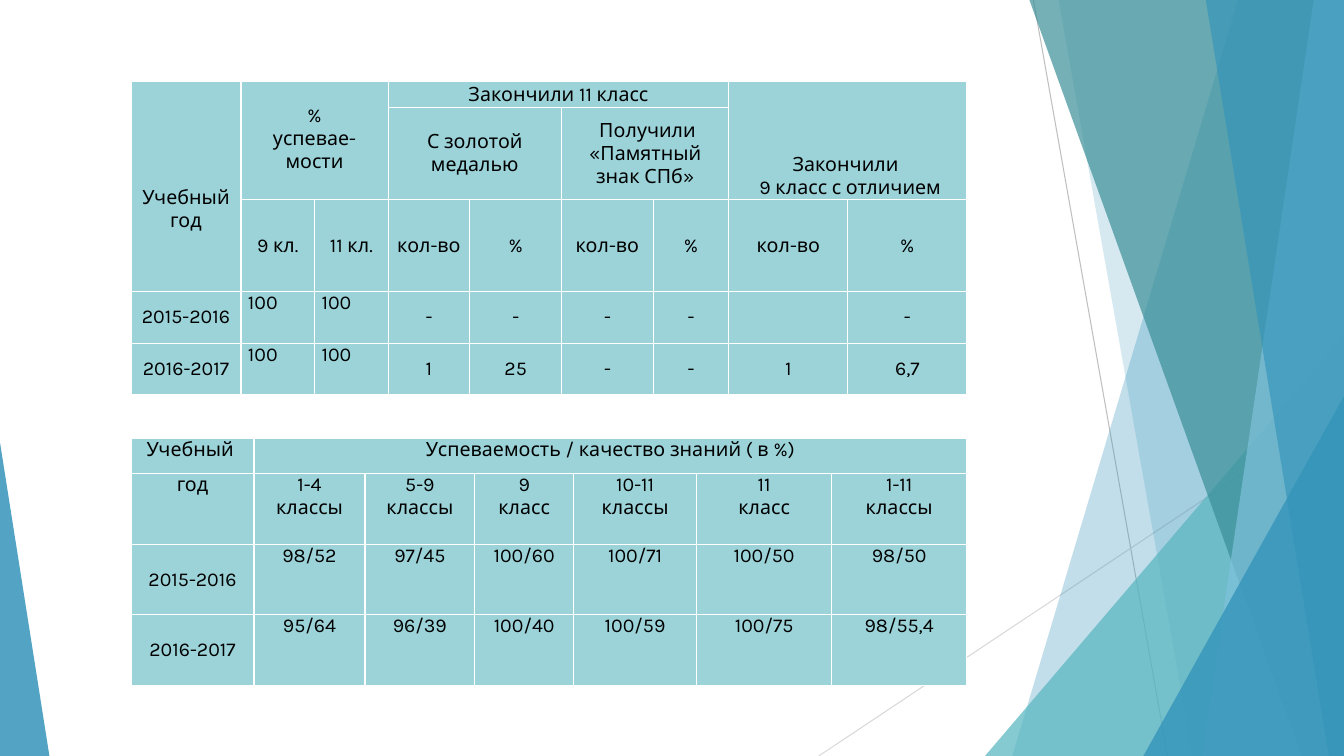
from lxml import etree
from pptx import Presentation
from pptx import util as u
from pptx.dml.color import RGBColor
from pptx.enum import shapes, text
from pptx.oxml.ns import qn

PX = 9144  # 100 px to the inch
WIDTH, HEIGHT = 1333, 750

BLUE = RGBColor(0x34, 0x94, 0xBA)
TEAL = RGBColor(0x58, 0xB6, 0xC0)
DARK_TEAL = RGBColor(0x3A, 0x8F, 0x98)
LIGHT_BLUE = RGBColor(0x7F, 0xC1, 0xDB)
CELL_FILL = RGBColor(0x9B, 0xD3, 0xD9)
GREY = RGBColor(0xBF, 0xBF, 0xBF)
LIGHT_GREY = RGBColor(0xD9, 0xD9, 0xD9)
BLACK = RGBColor(0, 0, 0)
WHITE = RGBColor(0xFF, 0xFF, 0xFF)

TOP, MIDDLE, BOTTOM = (text.MSO_ANCHOR.TOP, text.MSO_ANCHOR.MIDDLE,
                       text.MSO_ANCHOR.BOTTOM)
LINE_HEIGHT = 23


def px(length):
    return u.Emu(length * PX)


# Decoration
def paint(shape, color, opacity):
    shape.shadow.inherit = False
    shape.line.fill.background()
    shape.fill.solid()
    shape.fill.fore_color.rgb = color
    color_element = shape.fill._xPr.find(qn("a:solidFill"))[0]
    etree.SubElement(color_element, qn("a:alpha"), val=str(opacity * 1000))


def add_line(slide, start, end, color):
    line = slide.shapes.add_connector(
        shapes.MSO_CONNECTOR.STRAIGHT, *map(px, start + end))
    line.line.color.rgb = color
    line.line.width = u.Pt(0.75)
    etree.SubElement(line._element.spPr, qn("a:effectLst"))


def add_band(slide, top_left, bottom_left, color, opacity):
    """A full-height band that reaches the right edge of the slide."""
    builder = slide.shapes.build_freeform(top_left, 0, scale=PX)
    builder.add_line_segments(
        [(WIDTH, 0), (WIDTH, HEIGHT), (bottom_left, HEIGHT)], close=True)
    paint(builder.convert_to_shape(), color, opacity)


def add_corner(slide, box, apex, color, opacity):
    triangle = slide.shapes.add_shape(
        shapes.MSO_SHAPE.ISOSCELES_TRIANGLE, *map(px, box))
    triangle.adjustments[0] = apex
    paint(triangle, color, opacity)


def add_decoration(slide):
    add_line(slide, (1025, 0), (1158, HEIGHT), GREY)
    add_line(slide, (WIDTH, 403), (812, HEIGHT), LIGHT_GREY)
    add_band(slide, 1228, 1004, BLUE, 30)
    add_band(slide, 1050, 1183, BLUE, 20)
    add_corner(slide, (977, 333, 356, 417), 1, TEAL, 72)
    add_band(slide, 1021, 1291, DARK_TEAL, 70)
    add_band(slide, 1303, 1192, LIGHT_BLUE, 70)
    add_band(slide, 1196, 1318, BLUE, 65)
    add_corner(slide, (1134, 393, 199, 357), 1, BLUE, 80)
    add_corner(slide, (0, 439, 49, 311), 0, BLUE, 85)


# Tables
def format_cell(cell, content, alignment, values):
    properties = cell._tc.get_or_add_tcPr()
    for side in ("lnL", "lnR", "lnT", "lnB"):
        border = etree.SubElement(properties, qn("a:" + side), w="12700")
        fill = etree.SubElement(border, qn("a:solidFill"))
        etree.SubElement(fill, qn("a:srgbClr"), val=str(WHITE))
    cell.fill.solid()
    cell.fill.fore_color.rgb = CELL_FILL
    margins = {"margin_left": px(7), "margin_right": px(7),
               "margin_top": 0, "margin_bottom": 0}
    for name, value in {**margins, **values}.items():
        setattr(cell, name, value)
    if not content:
        return
    cell.text = content
    font_values = {"name": "Karla", "size": u.Pt(14), "bold": False}
    for paragraph in cell.text_frame.paragraphs:
        paragraph.alignment = alignment
        for run in paragraph.runs:
            for name, value in font_values.items():
                setattr(run.font, name, value)
            run.font.color.rgb = BLACK


def add_grid(slide, left, top, columns, rows, contents, spans, anchor,
             exceptions, left_aligned=()):
    frame = slide.shapes.add_table(
        len(rows), len(columns), px(left), px(top),
        px(sum(columns)), px(sum(rows)))
    table = frame.table
    table.first_row = table.horz_banding = False
    for column, width in zip(table.columns, columns):
        column.width = px(width)
    for row, height in zip(table.rows, rows):
        row.height = px(height)
    for (row, column), (down, across) in spans.items():
        table.cell(row, column).merge(
            table.cell(row + down - 1, column + across - 1))
    for row, line in enumerate(contents):
        for column, content in enumerate(line):
            place = row, column
            alignment = (text.PP_ALIGN.LEFT if place in left_aligned
                         else text.PP_ALIGN.CENTER)
            values = {"vertical_anchor": anchor, **exceptions.get(place, {})}
            format_cell(table.cell(row, column), content, alignment, values)


def add_graduates_table(slide, left, top):
    contents = [
        ["Учебный год", "%\nуспевае-\nмости", "", "Закончили 11 класс",
         "", "", "", "Закончили \n 9 класс с отличием", ""],
        ["", "", "", "С золотой медалью", "",
         " Получили «Памятный знак СПб»", "", "", ""],
        ["", "9 кл.", "11 кл."] + ["кол-во", "%"] * 3,
        ["2015-2016", "100", "100", "-", "-", "-", "-", "", "-"],
        ["2016-2017", "100", "100", "1", "25", "-", "-", "1", "6,7"],
    ]
    spans = {(0, 0): (3, 1), (0, 1): (2, 2), (0, 3): (1, 4),
             (0, 7): (2, 2), (1, 3): (1, 2), (1, 5): (1, 2)}
    pass_rates = [(row, column) for row in (3, 4) for column in (1, 2)]
    exceptions = {
        (0, 0): {"margin_top": px(2 * LINE_HEIGHT)},
        (0, 1): {"margin_top": px(LINE_HEIGHT), "vertical_anchor": TOP},
        (0, 7): {"vertical_anchor": BOTTOM},
        **{place: {"vertical_anchor": TOP} for place in pass_rates},
    }
    add_grid(slide, left, top, [109, 73, 73, 81, 91, 91, 75, 118, 118],
             [26, 91, 91, 51, 51], contents, spans, MIDDLE, exceptions,
             pass_rates)


def add_quality_table(slide, left, top):
    contents = [
        ["Учебный ", "Успеваемость / качество знаний ( в %)"] + [""] * 5,
        ["год", "1-4\nклассы", "5-9\nклассы", "9\nкласс",
         "10-11\nклассы", "11\nкласс", "1-11\nклассы"],
        ["2015-2016", "98/52", "97/45", "100/60", "100/71", "100/50", "98/50"],
        ["2016-2017", "95/64", "96/39", "100/40", "100/59", "100/75",
         "98/55,4"],
    ]
    years = {(row, 0): {"vertical_anchor": MIDDLE} for row in (2, 3)}
    add_grid(slide, left, top, [122, 110, 109, 98, 122, 134, 134],
             [35, 70, 70, 70], contents, {(0, 1): (1, 6)}, TOP, years)


def main():
    presentation = Presentation()
    presentation.slide_width = px(WIDTH)
    presentation.slide_height = px(HEIGHT)
    slide = presentation.slides.add_slide(presentation.slide_layouts[6])
    add_decoration(slide)
    add_graduates_table(slide, 130, 81)
    add_quality_table(slide, 130, 435)
    presentation.save("out.pptx")


if __name__ == "__main__":
    main()
